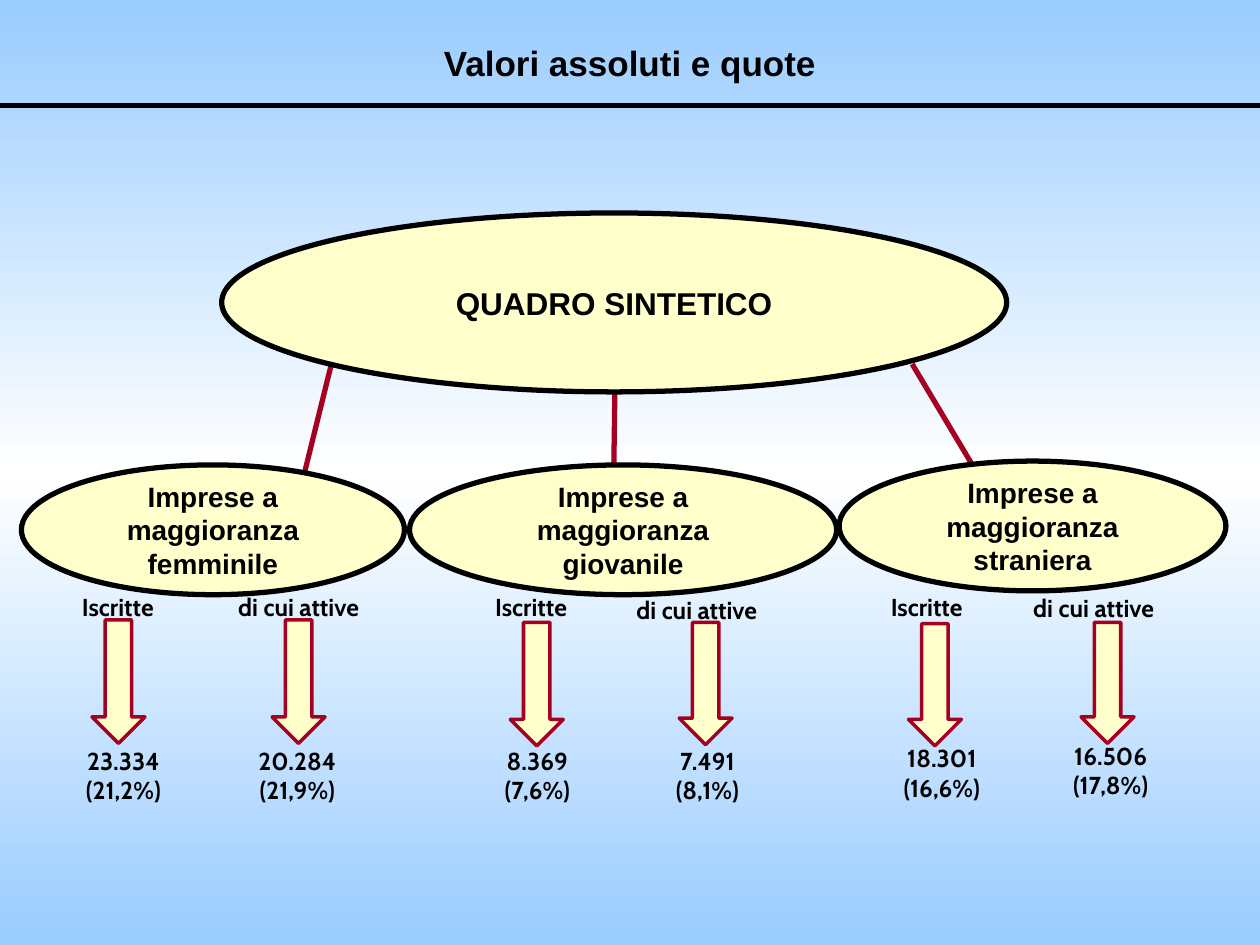
from copy import deepcopy

from lxml import etree
from pptx import Presentation
from pptx.dml.color import RGBColor
from pptx.enum import shapes, text
from pptx.oxml import ns
from pptx.util import Inches, Pt

BLACK, CREAM, RED, SKY, WHITE = "000000", "FFFFCC", "A50021", "99CCFF", "FFFFFF"

LINKS = [
    (4.88, 3.11, 4.86, 4.54),
    (7.24, 2.89, 8.29, 4.65),
    (2.63, 2.89, 2.19, 4.67),
]

GROUPS = [
    ("Imprese a maggioranza femminile", (0.17, 3.69, 3.04, 1.03), [
        ("Iscritte", (0.29, 4.65), (0.73, 4.92, 0.98), ("23.334", "(21,2%)"), (0.43, 5.87, 1.1)),
        ("di cui attive", (1.68, 4.65), (2.16, 4.92, 0.98), ("20.284", "(21,9%)"), (1.81, 5.87, 1.1)),
    ]),
    ("Imprese a maggioranza giovanile", (3.25, 3.69, 3.39, 1.03), [
        ("Iscritte", (3.57, 4.65), (4.05, 4.94, 0.98), ("8.369", "(7,6%)"), (3.66, 5.87, 1.21)),
        ("di cui attive", (4.84, 4.67), (5.39, 4.94, 0.97), ("7.491", "(8,1%)"), (5.01, 5.87, 1.21)),
    ]),
    ("Imprese a maggioranza straniera", (6.66, 3.66, 3.07, 1.03), [
        ("Iscritte", (6.71, 4.65), (7.21, 4.95, 0.97), ("18.301", "(16,6%)"), (6.87, 5.85, 1.21)),
        ("di cui attive", (7.99, 4.66), (8.58, 4.94, 0.96), ("16.506", "(17,8%)"), (8.21, 5.83, 1.21)),
    ]),
]
LABEL_WIDTHS = {"Iscritte": 1.29, "di cui attive": 1.38}


def rgb(color):
    return RGBColor.from_string(color)


def inches(values):
    return [Inches(value) for value in values]


def paint_background(slide):
    fill = slide.background.fill
    fill.gradient()
    fill.gradient_angle = 90
    stop_list = slide.element.find(".//" + ns.qn("a:gsLst"))
    stop_list.insert(1, deepcopy(stop_list[0]))
    for stop, position, color in zip(fill.gradient_stops, (0, 0.5, 1), (SKY, WHITE, SKY)):
        stop.position = position
        stop.color.rgb = rgb(color)


def write(shape, lines, size, font_name, anchor=text.MSO_ANCHOR.MIDDLE):
    frame = shape.text_frame
    frame.word_wrap = True
    frame.vertical_anchor = anchor
    frame.text = "\n".join(lines)
    for paragraph in frame.paragraphs:
        paragraph.alignment = text.PP_ALIGN.CENTER
        font = paragraph.font
        font.name, font.size, font.bold = font_name, Pt(size), True
        font.color.rgb = rgb(BLACK)


def add_title(slide, title):
    shape = slide.shapes.title
    shape.left, shape.top, shape.width, shape.height = inches((0, 0.21, 10, 0.58))
    write(shape, [title], 20, "Arial")
    shape.text_frame.auto_size = text.MSO_AUTO_SIZE.NONE


def add_line(slide, points, color, arrow=False):
    line = slide.shapes.add_connector(shapes.MSO_CONNECTOR.STRAIGHT, *inches(points))
    line.line.color.rgb = rgb(color)
    line.line.width = Pt(3)
    properties = line._element.spPr
    if arrow:
        etree.SubElement(properties.find(ns.qn("a:ln")), ns.qn("a:tailEnd"), type="arrow")
    etree.SubElement(properties, ns.qn("a:effectLst"))


def add_figure(slide, kind, box, line_color, line_width):
    shape = slide.shapes.add_shape(kind, *inches(box))
    shape.shadow.inherit = False
    shape.fill.solid()
    shape.fill.fore_color.rgb = rgb(CREAM)
    shape.line.color.rgb = rgb(line_color)
    shape.line.width = Pt(line_width)
    return shape


def add_ellipse(slide, label, box, size):
    ellipse = add_figure(slide, shapes.MSO_SHAPE.OVAL, box, BLACK, 3)
    write(ellipse, [label], size, "Arial")


def add_arrow(slide, left, top, height):
    add_figure(slide, shapes.MSO_SHAPE.DOWN_ARROW, (left, top, 0.42, height), RED, 2)


def add_text(slide, lines, box):
    shape = slide.shapes.add_textbox(*inches(box))
    write(shape, lines, 14, "Cabin", text.MSO_ANCHOR.TOP)
    shape.text_frame.auto_size = text.MSO_AUTO_SIZE.SHAPE_TO_FIT_TEXT


def main():
    presentation = Presentation()
    presentation.slide_width, presentation.slide_height = inches((10, 7.5))
    slide = presentation.slides.add_slide(presentation.slide_layouts[5])
    paint_background(slide)
    add_title(slide, "Valori assoluti e quote")
    add_line(slide, (0, 0.84, 10, 0.84), BLACK)
    for points in LINKS:
        add_line(slide, points, RED, arrow=True)
    add_ellipse(slide, "QUADRO SINTETICO", (1.76, 1.69, 6.23, 1.42), 18)
    for name, box, _ in GROUPS:
        add_ellipse(slide, name, box, 16)
    for _, _, columns in GROUPS:
        for label, label_place, arrow, values, values_place in columns:
            add_text(slide, [label], (*label_place, LABEL_WIDTHS[label], 0.34))
            add_arrow(slide, *arrow)
            add_text(slide, values, (*values_place, 0.57))
    presentation.save("out.pptx")


if __name__ == "__main__":
    main()
